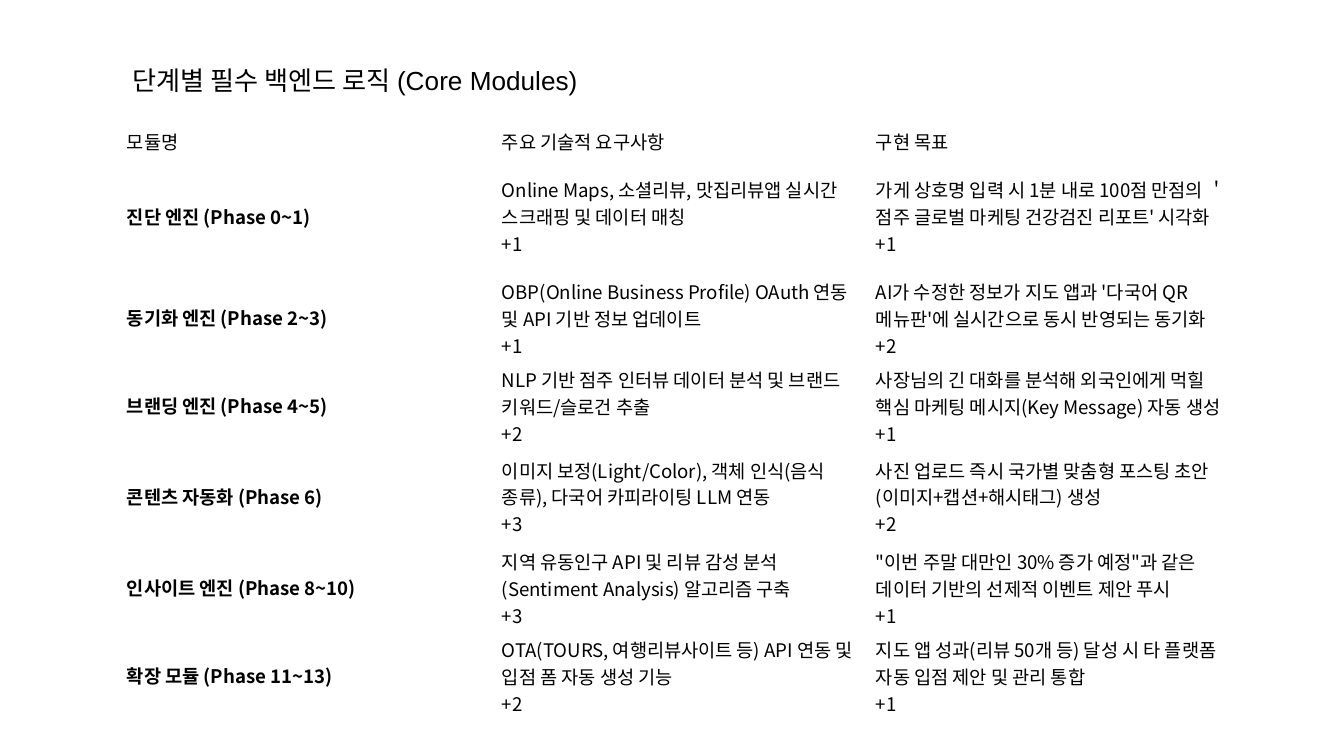
"""Build a slide with a table of the core backend modules for each phase."""

from pptx import Presentation
from pptx.dml.color import RGBColor
from pptx.enum.text import MSO_ANCHOR, MSO_AUTO_SIZE, PP_ALIGN
from pptx.oxml.ns import qn
from pptx.util import Pt
from lxml.etree import SubElement

TITLE = "단계별 필수 백엔드 로직 (Core Modules)"
HEADER = ("모듈명", "주요 기술적 요구사항", "구현 목표")
MODULES = [
    ("진단 엔진 (Phase 0~1)",
     "Online Maps, 소셜리뷰, 맛집리뷰앱 실시간 스크래핑 및 데이터 매칭\n+1",
     "가게 상호명 입력 시 1분 내로 100점 만점의 ＇점주 글로벌 마케팅 건강검진 리포트' 시각화\n+1"),
    ("동기화 엔진 (Phase 2~3)",
     "OBP(Online Business Profile) OAuth 연동 및 API 기반 정보 업데이트\n+1",
     "AI가 수정한 정보가 지도 앱과 '다국어 QR 메뉴판'에 실시간으로 동시 반영되는 동기화\n+2"),
    ("브랜딩 엔진 (Phase 4~5)",
     "NLP 기반 점주 인터뷰 데이터 분석 및 브랜드 키워드/슬로건 추출\n+2",
     "사장님의 긴 대화를 분석해 외국인에게 먹힐 핵심 마케팅 메시지(Key Message) 자동 생성\n+1"),
    ("콘텐츠 자동화 (Phase 6)",
     "이미지 보정(Light/Color), 객체 인식(음식 종류), 다국어 카피라이팅 LLM 연동\n+3",
     "사진 업로드 즉시 국가별 맞춤형 포스팅 초안(이미지+캡션+해시태그) 생성\n+2"),
    ("인사이트 엔진 (Phase 8~10)",
     "지역 유동인구 API 및 리뷰 감성 분석(Sentiment Analysis) 알고리즘 구축\n+3",
     "\"이번 주말 대만인 30% 증가 예정\"과 같은 데이터 기반의 선제적 이벤트 제안 푸시\n+1"),
    ("확장 모듈 (Phase 11~13)",
     "OTA(TOURS, 여행리뷰사이트 등) API 연동 및 입점 폼 자동 생성 기능\n+2",
     "지도 앱 성과(리뷰 50개 등) 달성 시 타 플랫폼 자동 입점 제안 및 관리 통합\n+1"),
]

BLACK = RGBColor(0, 0, 0)
KOREAN_FONT = "Noto Sans CJK KR"
SLIDE_SIZE = (1344, 756)
TITLE_BOX = (119, 58, 672, 46)
TABLE_LEFT, TABLE_TOP = 119, 124
COLUMN_WIDTHS = (375, 374, 374)
ROW_HEIGHTS = (35, 115, 88, 88, 94, 88, 88)
CELL_MARGIN_X, CELL_MARGIN_Y = 8, 4


def px(length):
    return round(length * 914400 / 134.4)


def format_paragraph(paragraph, font_name, size, bold=False):
    font = paragraph.font
    font.name, font.size, font.bold = font_name, Pt(size), bold
    font.color.rgb = BLACK
    properties = paragraph._p.pPr.find(qn("a:defRPr"))
    properties.set("kern", "0")
    SubElement(properties, qn("a:ea")).set("typeface", KOREAN_FONT)


def add_title(slide):
    title = slide.shapes.title
    title.left, title.top, title.width, title.height = map(px, TITLE_BOX)
    frame = title.text_frame
    frame.text = TITLE
    frame.word_wrap = True
    frame.auto_size = MSO_AUTO_SIZE.SHAPE_TO_FIT_TEXT
    frame.vertical_anchor = MSO_ANCHOR.TOP
    paragraph = frame.paragraphs[0]
    paragraph.alignment = PP_ALIGN.LEFT
    format_paragraph(paragraph, "Arial", 14)


def fill_cell(cell, text, bold):
    cell.text = text
    cell.fill.background()
    cell.vertical_anchor = MSO_ANCHOR.MIDDLE
    cell.margin_left = cell.margin_right = px(CELL_MARGIN_X)
    cell.margin_top = cell.margin_bottom = px(CELL_MARGIN_Y)
    for paragraph in cell.text_frame.paragraphs:
        format_paragraph(paragraph, KOREAN_FONT, 10, bold)


def add_module_table(slide):
    rows = [HEADER, *MODULES]
    table = slide.shapes.add_table(
        len(rows), len(HEADER), px(TABLE_LEFT), px(TABLE_TOP),
        px(sum(COLUMN_WIDTHS)), px(sum(ROW_HEIGHTS))).table
    table.first_row = table.horz_banding = False
    for column, width in zip(table.columns, COLUMN_WIDTHS):
        column.width = px(width)
    for row_index, (texts, height) in enumerate(zip(rows, ROW_HEIGHTS)):
        table.rows[row_index].height = px(height)
        for column_index, text in enumerate(texts):
            is_module_name = row_index > 0 and column_index == 0
            fill_cell(table.cell(row_index, column_index), text, is_module_name)


def main():
    presentation = Presentation()
    presentation.slide_width, presentation.slide_height = map(px, SLIDE_SIZE)
    slide = presentation.slides.add_slide(presentation.slide_layouts[5])
    add_title(slide)
    add_module_table(slide)
    presentation.save("out.pptx")


if __name__ == "__main__":
    main()
